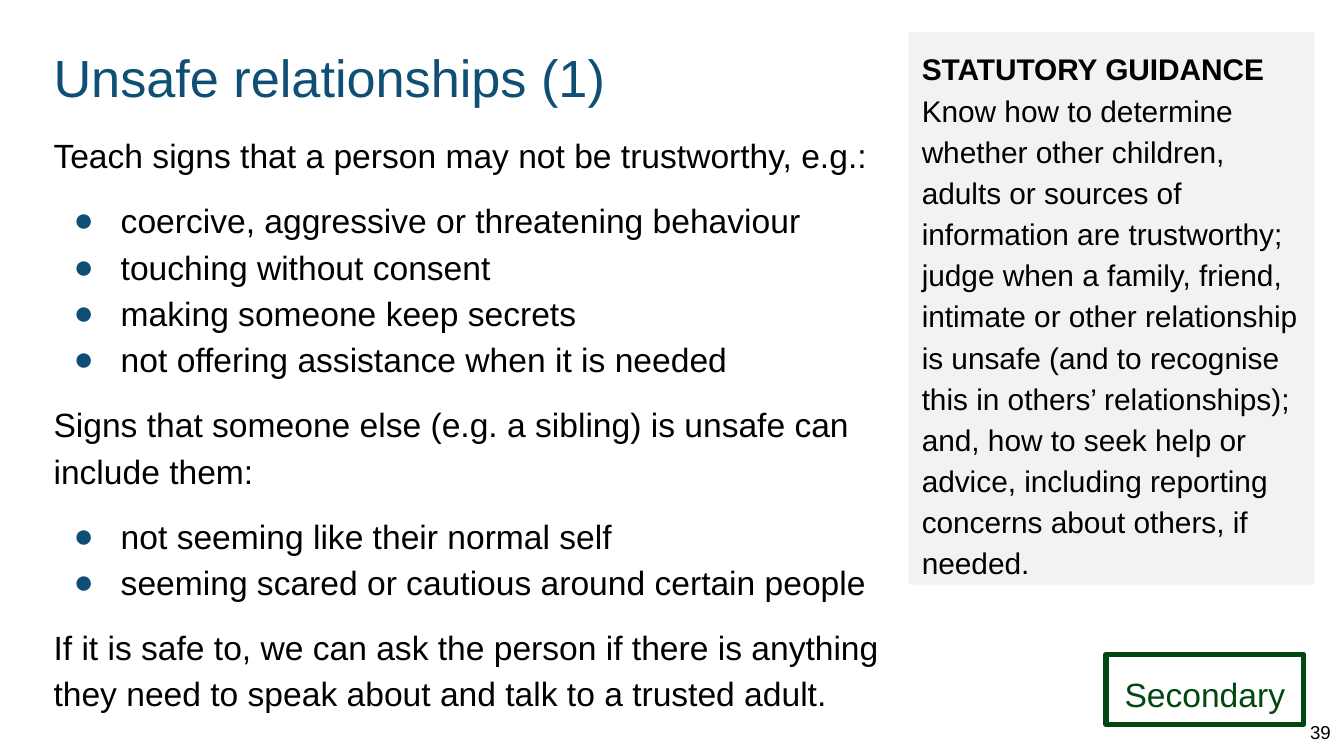
from dataclasses import dataclass

from lxml import etree
from pptx import Presentation
from pptx.dml.color import RGBColor
from pptx.enum.shapes import MSO_SHAPE
from pptx.enum.text import MSO_ANCHOR, PP_ALIGN
from pptx.oxml.ns import qn
from pptx.util import Inches, Pt

RECT = MSO_SHAPE.RECTANGLE
TOP, MIDDLE = MSO_ANCHOR.TOP, MSO_ANCHOR.MIDDLE
LEFT, CENTER, RIGHT = PP_ALIGN.LEFT, PP_ALIGN.CENTER, PP_ALIGN.RIGHT


@dataclass(frozen=True)
class Theme:
    font: str = "Arial"
    ink: str = "000000"
    blue: str = "104F75"
    green: str = "004712"
    panel: str = "F3F2F1"
    title: int = 28
    body: int = 18
    guide: int = 16
    small: int = 10
    lead: float = 1.15
    gap: int = 10
    edge: int = 3


def rgb(code):
    return RGBColor.from_string(code)


def write(par, text, font, size, color, bold=False):
    run = par.add_run()
    run.text = text
    face = run.font
    face.name, face.size, face.bold = font, Pt(size), bold
    face.color.rgb = rgb(color)


def add_bullet(par, color, font):
    props = par._p.get_or_add_pPr()
    props.set("marL", str(Inches(0.5)))
    props.set("indent", str(Inches(-0.35)))
    tint = etree.SubElement(props, qn("a:buClr"))
    etree.SubElement(tint, qn("a:srgbClr"), val=color)
    etree.SubElement(props, qn("a:buFont"), typeface=font)
    etree.SubElement(props, qn("a:buChar"), char="●")


class Page:
    def __init__(self, deck, theme):
        self.slide = deck.slides.add_slide(deck.slide_layouts[6])
        self.theme = theme

    def frame(self, shape, anchor=TOP):
        """Set wrapping, anchor and equal insets on the shape's text."""
        frame = shape.text_frame
        frame.word_wrap = True
        frame.vertical_anchor = anchor
        frame.margin_left = frame.margin_right = Inches(0.1)
        frame.margin_top = frame.margin_bottom = Inches(0.1)
        return frame

    def text(self, box, anchor=TOP):
        shape = self.slide.shapes.add_textbox(*map(Inches, box))
        return self.frame(shape, anchor)

    def rect(self, box, fill=None, line=None):
        shape = self.slide.shapes.add_shape(RECT, *map(Inches, box))
        shape.shadow.inherit = False
        if fill:
            shape.fill.solid()
            shape.fill.fore_color.rgb = rgb(fill)
        else:
            shape.fill.background()
        if line:
            shape.line.color.rgb = rgb(line)
            shape.line.width = Pt(self.theme.edge)
        else:
            shape.line.fill.background()
        return self.frame(shape)

    def para(self, frame, text, size, color=None, bold=False, align=LEFT,
             lead=None, before=0, bullet=False):
        """Fill the empty first paragraph, or add one after the last."""
        par = frame.paragraphs[-1]
        if par.runs:
            par = frame.add_paragraph()
        par.alignment = align
        par.space_before = Pt(before)
        if lead:
            par.line_spacing = lead
        if bullet:
            add_bullet(par, self.theme.blue, self.theme.font)
        write(par, text, self.theme.font, size, color or self.theme.ink, bold)
        return par


SIGNS = [
    ("Teach signs that a person may not be trustworthy, e.g.:", [
        "coercive, aggressive or threatening behaviour",
        "touching without consent",
        "making someone keep secrets",
        "not offering assistance when it is needed",
    ]),
    ("Signs that someone else (e.g. a sibling) is unsafe can include them:", [
        "not seeming like their normal self",
        "seeming scared or cautious around certain people",
    ]),
    ("If it is safe to, we can ask the person if there is anything they need "
     "to speak about and talk to a trusted adult.", []),
]
GUIDANCE = (
    "Know how to determine whether other children, adults or sources of "
    "information are trustworthy; judge when a family, friend, intimate or "
    "other relationship is unsafe (and to recognise this in others’ "
    "relationships); and, how to seek help or advice, including reporting "
    "concerns about others, if needed."
)


def main():
    deck = Presentation()
    deck.slide_width = Inches(10)
    deck.slide_height = Inches(10 * 9 / 16)
    theme = Theme()
    page = Page(deck, theme)

    title = page.text((0.3, 0.24, 6.41, 0.63))
    page.para(title, "Unsafe relationships (1)", theme.title, theme.blue)

    body = page.text((0.3, 0.86, 6.41, 4.01))
    for part, (intro, items) in enumerate(SIGNS):
        page.para(body, intro, theme.body, lead=theme.lead,
                  before=theme.gap if part else 0)
        for row, item in enumerate(items):
            page.para(body, item, theme.body, lead=theme.lead, bullet=True,
                      before=0 if row else theme.gap)

    guide = page.rect((6.76, 0.24, 3.02, 4.11), fill=theme.panel)
    par = page.para(guide, "STATUTORY GUIDANCE", theme.guide, bold=True,
                    lead=theme.lead)
    par.add_line_break()
    write(par, GUIDANCE, theme.font, theme.guide, theme.ink)

    stage = page.rect((8.23, 4.87, 1.47, 0.52), line=theme.green)
    page.para(stage, "Secondary", theme.body, theme.green, align=CENTER,
              lead=theme.lead)

    number = page.text((9.61, 5.26, 0.39, 0.37), MIDDLE)
    page.para(number, "39", theme.small, align=RIGHT)

    deck.save("out.pptx")


if __name__ == "__main__":
    main()
